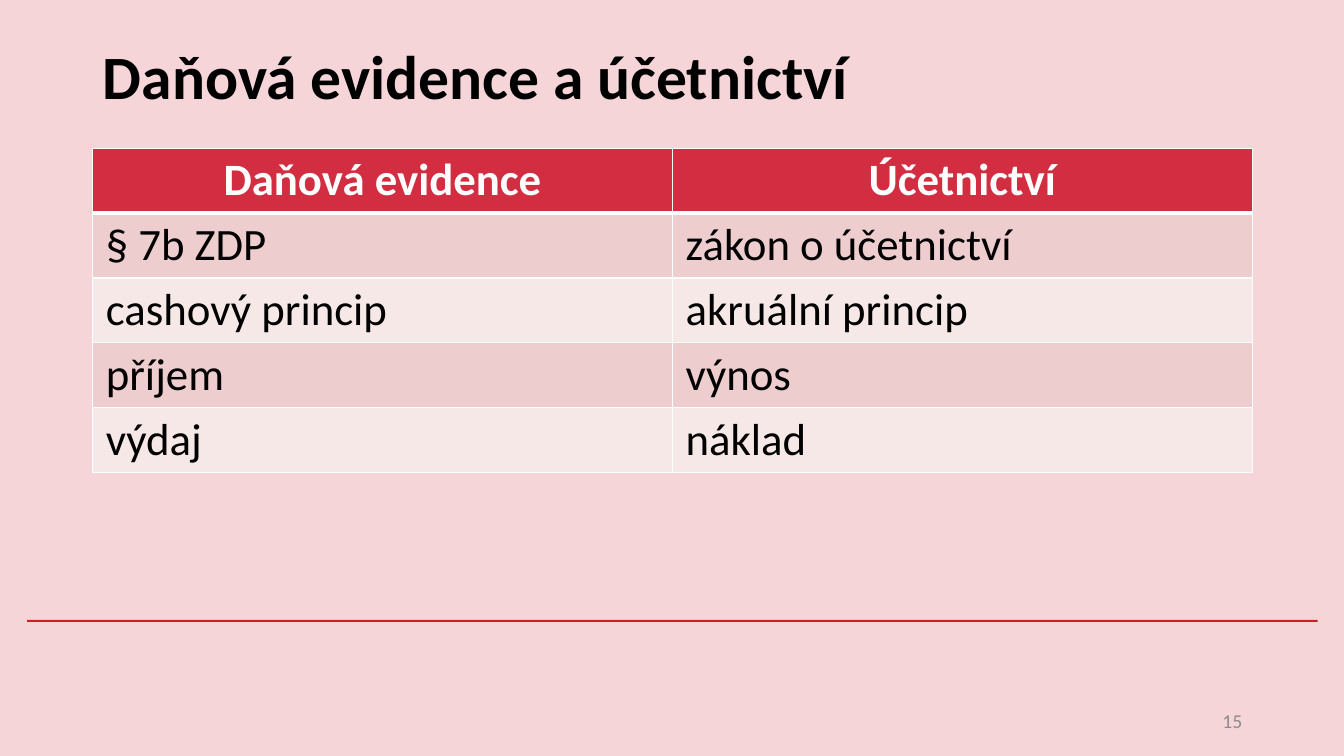
from pptx import Presentation
from pptx.dml.color import RGBColor
from pptx.enum.shapes import MSO_SHAPE as Shape
from pptx.enum.text import MSO_ANCHOR as Anchor, PP_ALIGN as Align
from pptx.oxml import parse_xml
from pptx.oxml.ns import nsdecls
from pptx.util import Emu, Pt

SCALE = 9144
ROWS = [
    ("Daňová evidence", "Účetnictví"),
    ("§ 7b ZDP", "zákon o účetnictví"),
    ("cashový princip", "akruální princip"),
    ("příjem", "výnos"),
    ("výdaj", "náklad"),
]
HEAD = "D22D40"
BANDS = ("F7E8E8", "EECDCF")


def px(size):
    return Emu(size * SCALE)


def box(*sizes):
    return [px(size) for size in sizes]


def paint(fill, color):
    fill.solid()
    fill.fore_color.rgb = RGBColor.from_string(color)


def write(frame, text, size=32, color="000000", bold=False,
          align=Align.LEFT, anchor=Anchor.MIDDLE):
    frame.word_wrap = True
    frame.vertical_anchor = anchor
    para = frame.paragraphs[0]
    para.alignment = align
    run = para.add_run()
    run.text = text
    font = run.font
    font.name = "Calibri"
    font.size = Pt(size)
    font.bold = bold
    font.color.rgb = RGBColor.from_string(color)


def edge(cell, side, width):
    cell._tc.get_or_add_tcPr().append(parse_xml(
        f'<a:{side} {nsdecls("a")} w="{Pt(width)}"><a:solidFill>'
        f'<a:srgbClr val="FFFFFF"/></a:solidFill></a:{side}>'))


def style(cell, text, row):
    head = row == 0
    cell.margin_left = cell.margin_right = px(13)
    cell.margin_top = cell.margin_bottom = px(5)
    write(cell.text_frame, text, bold=head, anchor=Anchor.TOP,
          color="FFFFFF" if head else "000000",
          align=Align.CENTER if head else Align.LEFT)
    for side in ("lnL", "lnR", "lnT", "lnB"):
        thick = (side, row) in (("lnB", 0), ("lnT", 1))
        edge(cell, side, 3 if thick else 1)
    paint(cell.fill, HEAD if head else BANDS[row % 2])


def grid(slide, left, top, width, step):
    count = len(ROWS)
    table = slide.shapes.add_table(
        count, 2, *box(left, top, width, step * count)).table
    for row, texts in enumerate(ROWS):
        table.rows[row].height = px(step)
        for col, text in enumerate(texts):
            style(table.cell(row, col), text, row)


def rule(slide, *place):
    bar = slide.shapes.add_shape(Shape.RECTANGLE, *box(*place))
    bar.shadow.inherit = False
    paint(bar.fill, "CD1F21")
    bar.line.fill.background()


def title(slide, text, *place):
    head = slide.shapes.title
    head.left, head.top, head.width, head.height = box(*place)
    write(head.text_frame, text, size=44, bold=True)


def label(slide, text, *place, **form):
    note = slide.shapes.add_textbox(*box(*place))
    write(note.text_frame, text, **form)


def main():
    deck = Presentation()
    deck.slide_width, deck.slide_height = box(1333, 750)
    slide = deck.slides.add_slide(deck.slide_layouts[5])
    paint(slide.background.fill, "F6D5D9")
    rule(slide, 27, 615, 1280, 2)
    title(slide, "Daňová evidence a účetnictví", 92, 2, 1150, 145)
    grid(slide, 92, 147, 1150, 64)
    label(slide, "15", 942, 695, 300, 40,
          size=14, color="8C8C8C", align=Align.RIGHT)
    deck.save("out.pptx")


if __name__ == "__main__":
    main()
